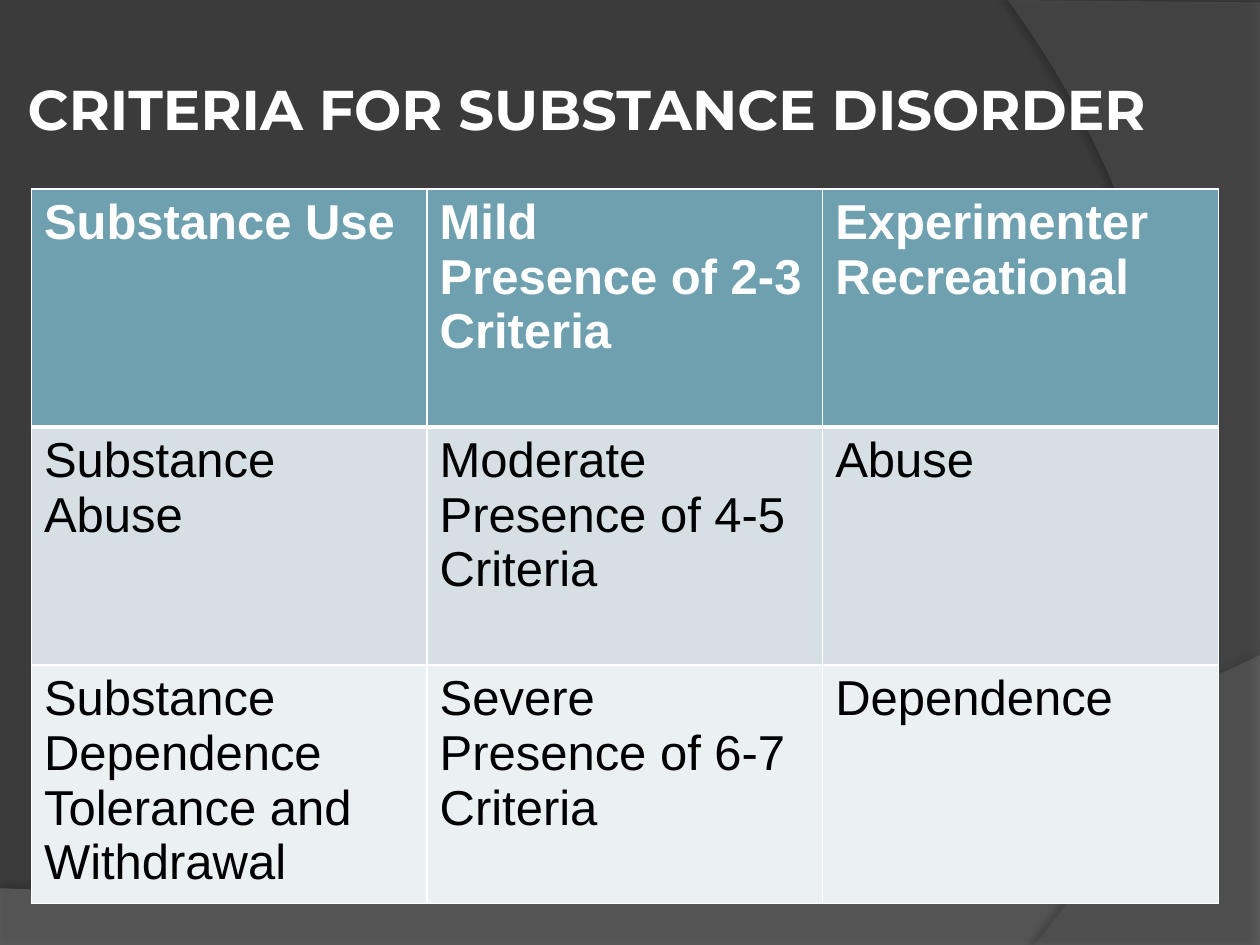
from dataclasses import dataclass

from lxml.etree import SubElement
from pptx import Presentation
from pptx.dml.color import RGBColor
from pptx.enum.text import MSO_ANCHOR, PP_ALIGN
from pptx.oxml.ns import qn
from pptx.util import Inches, Pt

# Content
HEADING = "CRITERIA FOR SUBSTANCE DISORDER"
CRITERIA = [
    ["Substance Use", "Mild\nPresence of 2-3 Criteria", "Experimenter\nRecreational"],
    ["Substance Abuse", "Moderate\nPresence of 4-5 Criteria", "Abuse"],
    ["Substance Dependence\nTolerance and Withdrawal",
     "Severe\nPresence of 6-7 Criteria", "Dependence"],
]


@dataclass(frozen=True)
class Theme:
    backdrop: str = "3B3B3B"
    light: str = "FFFFFF"
    dark: str = "000000"
    row_fills: tuple = ("6EA0B0", "D5DFE4", "EBF0F2")
    heading_font: str = "Montserrat"
    body_font: str = "Arial"
    heading_size: int = 32
    body_size: int = 28


THEME = Theme()
WIDTH, HEIGHT = 10, 7.5
TITLE_BOX = (0.17, 0.17, 9.58, 1.37)
TABLE_LEFT, TABLE_TOP = 0.25, 1.5
COLUMN_WIDTH, ROW_HEIGHT = 3.14, 1.89

# Background sweeps: straight corners, then one Bezier edge (start, controls, end)
SWEEPS = [
    {"corners": [(0, 7.05), (0, 7.51), (10, 7.51)],
     "edge": [(10, 5.2), (5.59, 7.29), (3.91, 7.19), (0, 7.05)],
     "color": "7F7F7F", "opacity": 45,
     "shadow": {"opacity": 35, "blur": 4, "distance": 3.5, "angle": 270}},
    {"corners": [(10, 0.02), (10, 7.5)],
     "edge": [(8.21, 7.5), (9.35, 6.19), (10.18, 3), (8, 0)],
     "color": "5E5E5E", "opacity": 40,
     "shadow": {"opacity": 45, "blur": 4, "distance": 4, "angle": 180}},
]


def rgb(color):
    return RGBColor.from_string(color)


def apply(target, formats):
    for name, value in formats.items():
        setattr(target, name, value)


def font_format(name, size, color, bold):
    return {"name": name, "size": Pt(size), "bold": bold}, rgb(color)


def style_font(font, name, size, color, bold):
    apply(font, {"name": name, "size": Pt(size), "bold": bold})
    font.color.rgb = rgb(color)


def bezier(start, first, second, end, steps=48):
    for step in range(steps + 1):
        t = step / steps
        weights = ((1 - t) ** 3, 3 * t * (1 - t) ** 2, 3 * t * t * (1 - t), t ** 3)
        yield tuple(sum(w * p[axis] for w, p in zip(weights, (start, first, second, end)))
                    for axis in (0, 1))


def set_opacity(color_element, percent):
    SubElement(color_element, qn("a:alpha"), val=str(percent * 1000))


def add_sweep(slide, corners, edge, color, opacity, shadow):
    points = [(Inches(x), Inches(y)) for x, y in [*corners, *bezier(*edge)]]
    builder = slide.shapes.build_freeform(*points[0])
    builder.add_line_segments(points[1:], close=True)
    sweep = builder.convert_to_shape()
    sweep.fill.solid()
    sweep.fill.fore_color.rgb = rgb(color)
    sweep.line.fill.background()
    sweep.shadow.inherit = False
    properties = sweep._element.spPr
    set_opacity(properties.find(qn("a:solidFill")).find(qn("a:srgbClr")), opacity)
    outer = SubElement(properties.find(qn("a:effectLst")), qn("a:outerShdw"),
                       blurRad=str(Pt(shadow["blur"])), dist=str(Pt(shadow["distance"])),
                       dir=str(shadow["angle"] * 60000), rotWithShape="0")
    set_opacity(SubElement(outer, qn("a:srgbClr"), val=THEME.dark), shadow["opacity"])


def add_borders(cell, bottom_width):
    properties = cell._tc.get_or_add_tcPr()
    widths = {"a:lnL": 1, "a:lnR": 1, "a:lnT": 1, "a:lnB": bottom_width}
    for position, (side, width) in enumerate(widths.items()):
        line = SubElement(properties, qn(side), w=str(Pt(width)))
        SubElement(SubElement(line, qn("a:solidFill")), qn("a:srgbClr"), val=THEME.light)
        properties.insert(position, line)  # borders come before the fill


def add_heading(slide):
    heading = slide.shapes.title
    # Bring the heading in front of the sweeps
    slide.shapes._spTree.append(heading._element)
    apply(heading, dict(zip(("left", "top", "width", "height"), map(Inches, TITLE_BOX))))
    frame = heading.text_frame
    frame.text = HEADING
    margins = {f"margin_{side}": Inches(0.05) for side in ("left", "right", "top", "bottom")}
    apply(frame, {"vertical_anchor": MSO_ANCHOR.MIDDLE, "word_wrap": True, **margins})
    line = frame.paragraphs[0]
    line.alignment = PP_ALIGN.LEFT
    style_font(line.runs[0].font, THEME.heading_font, THEME.heading_size, THEME.light, True)


def add_criteria(slide):
    rows, columns = len(CRITERIA), len(CRITERIA[0])
    grid = slide.shapes.add_table(
        rows, columns, Inches(TABLE_LEFT), Inches(TABLE_TOP),
        Inches(columns * COLUMN_WIDTH), Inches(rows * ROW_HEIGHT)).table
    for row, entries in enumerate(CRITERIA):
        is_header = row == 0
        color = THEME.light if is_header else THEME.dark
        for column, entry in enumerate(entries):
            cell = grid.cell(row, column)
            cell.text = entry
            cell.fill.solid()
            cell.fill.fore_color.rgb = rgb(THEME.row_fills[row])
            add_borders(cell, 3 if is_header else 1)
            for line in cell.text_frame.paragraphs:
                style_font(line.runs[0].font, THEME.body_font, THEME.body_size,
                           color, is_header)


def main():
    deck = Presentation()
    apply(deck, {"slide_width": Inches(WIDTH), "slide_height": Inches(HEIGHT)})
    slide = deck.slides.add_slide(deck.slide_layouts[5])
    slide.background.fill.solid()
    slide.background.fill.fore_color.rgb = rgb(THEME.backdrop)
    for sweep in SWEEPS:
        add_sweep(slide, **sweep)
    add_heading(slide)
    add_criteria(slide)
    deck.save("out.pptx")


if __name__ == "__main__":
    main()
